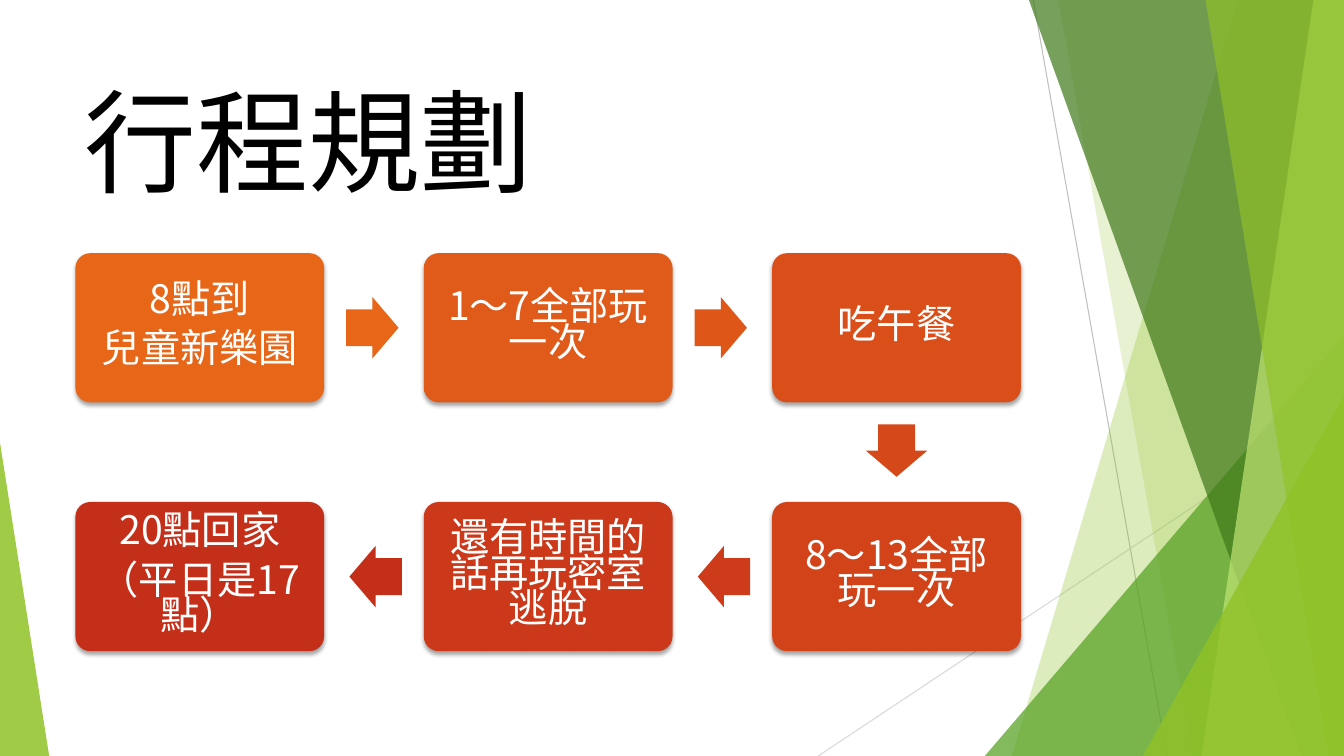
from dataclasses import dataclass
from itertools import pairwise

from lxml.etree import SubElement
from pptx import Presentation
from pptx.dml.color import RGBColor
from pptx.enum.shapes import MSO_CONNECTOR, MSO_SHAPE
from pptx.enum.text import MSO_ANCHOR, PP_ALIGN
from pptx.oxml.ns import qn
from pptx.util import Cm, Pt

FONT = "Noto Sans CJK SC"
PAGE_WIDTH, PAGE_HEIGHT = 33.87, 19.05
BOX_WIDTH, BOX_HEIGHT = 6.27, 3.76
FIRST_LEFT, FIRST_TOP = 1.9, 6.38
COLUMN_STEP, ROW_STEP = 8.78, 6.27
ARROW_LENGTH, ARROW_BREADTH = 1.32, 1.55
ARROW_SETBACK = 0.04


@dataclass
class Band:
    """A translucent panel that runs the full height to the right page edge."""
    top_left: float
    bottom_left: float
    color: str
    opacity: int


@dataclass
class Wedge:
    """A translucent right-angled triangle standing on the bottom edge."""
    left: float
    top: float
    width: float
    apex: float
    color: str
    opacity: int


@dataclass
class Line:
    start: tuple[float, float]
    end: tuple[float, float]
    color: str


@dataclass
class Step:
    column: int
    row: int
    color: str
    lines: list[str]

    @property
    def center(self) -> tuple[float, float]:
        return (FIRST_LEFT + self.column * COLUMN_STEP + BOX_WIDTH / 2,
                FIRST_TOP + self.row * ROW_STEP + BOX_HEIGHT / 2)


DECORATION = [
    Line((26.04, 0), (29.41, PAGE_HEIGHT), "BFBFBF"),
    Line((PAGE_WIDTH, 10.24), (20.62, PAGE_HEIGHT), "D9D9D9"),
    Band(31.19, 25.5, "90C226", 30),
    Band(26.67, 30.05, "90C226", 20),
    Wedge(24.82, 8.46, 9.05, 1, "54A021", 72),
    Band(25.93, 32.79, "3F7819", 70),
    Band(33.1, 30.28, "C0E474", 70),
    Band(30.38, 33.48, "90C226", 65),
    Wedge(28.8, 9.98, 5.07, 1, "90C226", 80),
    Wedge(0, 11.15, 1.24, 0, "90C226", 85),
]

STEPS = [
    Step(0, 0, "E76618", ["8點到", "兒童新樂園"]),
    Step(1, 0, "E05A19", ["1～7全部玩一次"]),
    Step(2, 0, "D94E19", ["吃午餐"]),
    Step(2, 1, "D24319", ["8～13全部玩一次"]),
    Step(1, 1, "CB391A", ["還有時間的話再玩密室逃脫"]),
    Step(0, 1, "C42F1A", ["20點回家", "（平日是17點）"]),
]
ARROW_COLORS = ["E76618", "DE5719", "D54819", "CD3B1A", "C42F1A"]


def rgb(color: str) -> RGBColor:
    return RGBColor.from_string(color)


def paint(shape, color: str, opacity: int = 100) -> None:
    shape.shadow.inherit = False
    shape.fill.solid()
    shape.fill.fore_color.rgb = rgb(color)
    shape.line.fill.background()
    if opacity < 100:
        tint = shape._element.spPr.find(qn("a:solidFill"))[0]
        SubElement(tint, qn("a:alpha"), val=str(opacity * 1000))


def add_span(para, text: str, size: float, color: str) -> None:
    span = para.add_run()
    span.text = text
    span.font.size = Pt(size)
    span.font.name = FONT
    span.font.color.rgb = rgb(color)
    SubElement(span._r.get_or_add_rPr(), qn("a:ea"), typeface=FONT)


def draw_line(page, line: Line) -> None:
    connector = page.shapes.add_connector(
        MSO_CONNECTOR.STRAIGHT, *map(Cm, line.start + line.end))
    connector.line.color.rgb = rgb(line.color)
    connector.line.width = Pt(0.75)
    SubElement(connector._element.spPr, qn("a:effectLst"))


def draw_band(page, band: Band) -> None:
    outline = page.shapes.build_freeform(Cm(band.top_left), 0)
    outline.add_line_segments([
        (Cm(PAGE_WIDTH), 0),
        (Cm(PAGE_WIDTH), Cm(PAGE_HEIGHT)),
        (Cm(band.bottom_left), Cm(PAGE_HEIGHT)),
    ])
    paint(outline.convert_to_shape(), band.color, band.opacity)


def draw_wedge(page, wedge: Wedge) -> None:
    triangle = page.shapes.add_shape(
        MSO_SHAPE.ISOSCELES_TRIANGLE, Cm(wedge.left), Cm(wedge.top),
        Cm(wedge.width), Cm(PAGE_HEIGHT - wedge.top))
    triangle.adjustments[0] = wedge.apex
    paint(triangle, wedge.color, wedge.opacity)


def add_soft_shadow(shape) -> None:
    effects = shape._element.spPr.find(qn("a:effectLst"))
    shadow = SubElement(effects, qn("a:outerShdw"), blurRad=str(Pt(3)),
                        dist=str(Pt(2)), dir="5400000", rotWithShape="0")
    black = SubElement(shadow, qn("a:srgbClr"), val="000000")
    SubElement(black, qn("a:alpha"), val="35000")


def draw_step(page, step: Step) -> None:
    x, y = step.center
    box = page.shapes.add_shape(
        MSO_SHAPE.ROUNDED_RECTANGLE, Cm(x - BOX_WIDTH / 2),
        Cm(y - BOX_HEIGHT / 2), Cm(BOX_WIDTH), Cm(BOX_HEIGHT))
    box.adjustments[0] = 0.1
    paint(box, step.color)
    add_soft_shadow(box)
    frame = box.text_frame
    frame.word_wrap = True
    frame.vertical_anchor = MSO_ANCHOR.MIDDLE
    frame.margin_left = frame.margin_right = Cm(0.41)
    frame.margin_top = frame.margin_bottom = Cm(0.41)
    for index, text in enumerate(step.lines):
        para = frame.add_paragraph() if index else frame.paragraphs[0]
        para.alignment = PP_ALIGN.CENTER
        para.line_spacing = 0.75
        para.space_after = Pt(9.8)
        add_span(para, text, 28, "FFFFFF")


def draw_arrow(page, source: Step, target: Step, color: str) -> None:
    across = target.column - source.column
    down = target.row - source.row
    x = (source.center[0] + target.center[0]) / 2 - across * ARROW_SETBACK
    y = (source.center[1] + target.center[1]) / 2 - down * ARROW_SETBACK
    arrow = page.shapes.add_shape(
        MSO_SHAPE.RIGHT_ARROW, Cm(x - ARROW_LENGTH / 2),
        Cm(y - ARROW_BREADTH / 2), Cm(ARROW_LENGTH), Cm(ARROW_BREADTH))
    arrow.adjustments[0] = 0.6
    arrow.adjustments[1] = 0.5
    arrow.rotation = 90 if down else 90 * (1 - across)
    paint(arrow, color)


def draw_title(page, text: str) -> None:
    title = page.shapes.title
    title.left, title.top = Cm(1.88), Cm(1.7)
    title.width, title.height = Cm(23.88), Cm(3.66)
    title.text_frame.vertical_anchor = MSO_ANCHOR.MIDDLE
    para = title.text_frame.paragraphs[0]
    para.alignment = PP_ALIGN.LEFT
    add_span(para, text, 80, "000000")
    page.shapes._spTree.append(title._element)  # in front of the panels


def main() -> None:
    deck = Presentation()
    deck.slide_width, deck.slide_height = Cm(PAGE_WIDTH), Cm(PAGE_HEIGHT)
    page = deck.slides.add_slide(deck.slide_layouts[5])

    # Background panels and title
    painters = {Line: draw_line, Band: draw_band, Wedge: draw_wedge}
    for item in DECORATION:
        painters[type(item)](page, item)
    draw_title(page, "行程規劃")

    # Flow of the day
    for step in STEPS:
        draw_step(page, step)
    for (source, target), color in zip(pairwise(STEPS), ARROW_COLORS):
        draw_arrow(page, source, target, color)

    deck.save("out.pptx")


if __name__ == "__main__":
    main()
